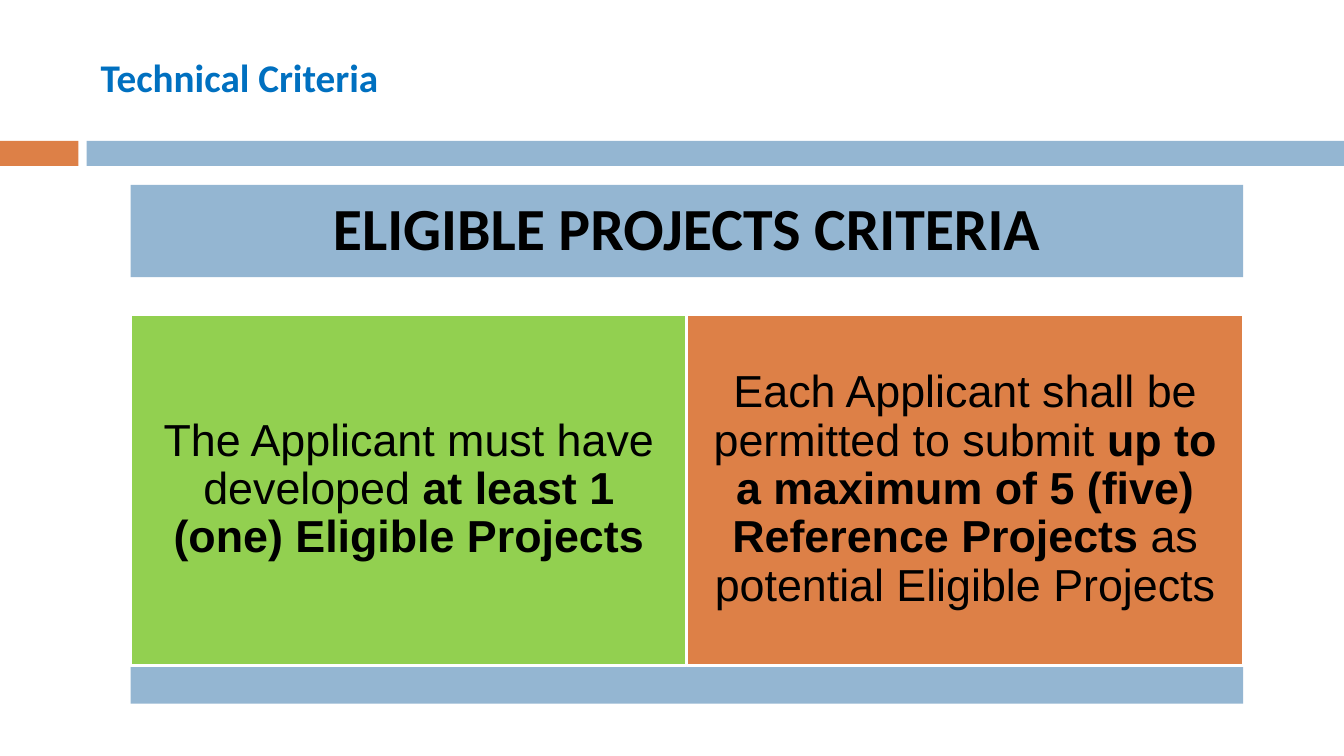
from pptx import Presentation
from pptx.dml.color import RGBColor
from pptx.enum.shapes import MSO_SHAPE
from pptx.enum.text import MSO_ANCHOR, PP_ALIGN
from pptx.util import Pt

RECT = MSO_SHAPE.RECTANGLE
MIDDLE = MSO_ANCHOR.MIDDLE
LEFT, CENTER = PP_ALIGN.LEFT, PP_ALIGN.CENTER

COLORS = {
    "blue": "94B6D2",
    "orange": "DD8047",
    "green": "92D050",
    "title": "0070C0",
    "text": "000000",
    "white": "FFFFFF",
}


def rgb(name):
    return RGBColor.from_string(COLORS[name])


def write(sp, runs, size=24, font="Arial", color="text", align=CENTER, inset=(7.2, 7.2)):
    tf = sp.text_frame
    tf.word_wrap = True
    tf.vertical_anchor = MIDDLE
    tf.margin_left = tf.margin_right = Pt(inset[0])
    tf.margin_top = tf.margin_bottom = Pt(inset[1])
    p = tf.paragraphs[0]
    p.alignment = align
    p.line_spacing = 0.9
    for text, bold in runs:
        r = p.add_run()
        r.text = text
        r.font.size = Pt(size)
        r.font.name = font
        r.font.bold = bold
        r.font.color.rgb = rgb(color)


prs = Presentation()
prs.slide_width, prs.slide_height = Pt(720), Pt(405)
s = prs.slides.add_slide(prs.slide_layouts[6])

left, width = 70, 596
card_top, card_height = 168.5, 188
card_width = width / 2

bars = [
    (0, 75.5, 42, 13.5, "orange"),
    (46.5, 75.5, 673.5, 13.5, "blue"),
    (left, 99, width, 49.5, "blue"),
    (left, card_top + card_height, width, 20.5, "blue"),
]
shapes = []
for x, y, w, h, color in bars:
    sp = s.shapes.add_shape(RECT, Pt(x), Pt(y), Pt(w), Pt(h))
    sp.shadow.inherit = False
    sp.fill.solid()
    sp.fill.fore_color.rgb = rgb(color)
    sp.line.fill.background()
    shapes.append(sp)
write(shapes[2], [("ELIGIBLE PROJECTS CRITERIA", True)],
      size=32, font="Calibri", inset=(9.6, 9.6))

title = s.shapes.add_textbox(Pt(48.5), Pt(13.5), Pt(642), Pt(58.5))
write(title, [("Technical Criteria", True)], size=21, font="Calibri",
      color="title", align=LEFT, inset=(5.4, 2.7))

cards = [
    ("green", [
        ("The Applicant must have developed ", False),
        ("at least 1 (one) Eligible Projects", True),
    ]),
    ("orange", [
        ("Each Applicant shall be permitted to submit ", False),
        ("up to a maximum of 5 (five) Reference Projects", True),
        (" as potential Eligible Projects", False),
    ]),
]
for i, (color, runs) in enumerate(cards):
    sp = s.shapes.add_shape(RECT, Pt(left + i * card_width), Pt(card_top),
                            Pt(card_width), Pt(card_height))
    sp.shadow.inherit = False
    sp.fill.solid()
    sp.fill.fore_color.rgb = rgb(color)
    sp.line.color.rgb = rgb("white")
    sp.line.width = Pt(1.5)
    write(sp, runs)

prs.save("out.pptx")
